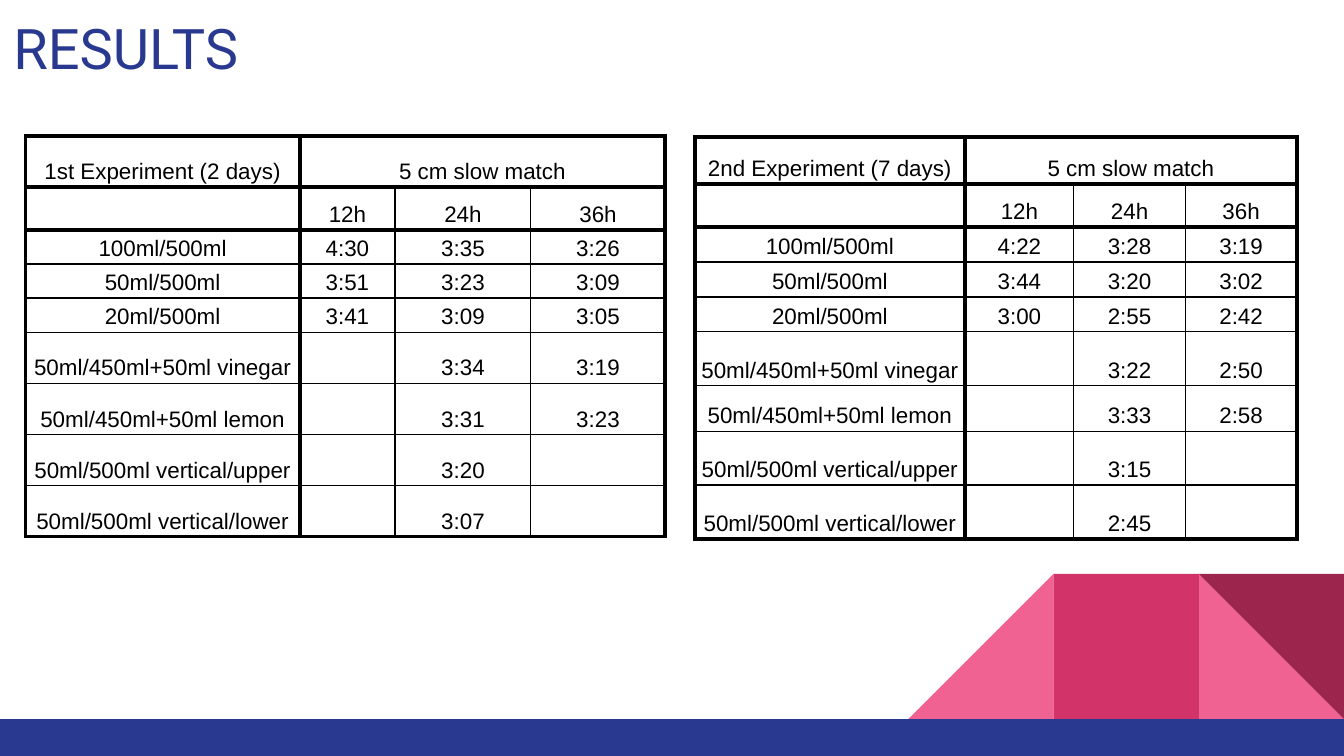
from dataclasses import dataclass

from lxml import etree
from pptx import Presentation
from pptx import util as u
from pptx.dml.color import RGBColor
from pptx.enum import shapes, text
from pptx.oxml import ns

NAVY = RGBColor(0x2A, 0x39, 0x90)
PINK = RGBColor(0xF0, 0x62, 0x92)
ROSE = RGBColor(0xD2, 0x33, 0x69)
WINE = RGBColor(0x9C, 0x25, 0x4D)
BLACK = RGBColor(0, 0, 0)

THICK, THIN = u.Pt(2.25), u.Pt(0.75)
TILE, TILE_TOP, TILE_LEFT = 1.08, 4.27, 6.76
HOURS = ["12h", "24h", "36h"]
MIXES = [
    "100ml/500ml",
    "50ml/500ml",
    "20ml/500ml",
    "50ml/450ml+50ml vinegar",
    "50ml/450ml+50ml lemon",
    "50ml/500ml vertical/upper",
    "50ml/500ml vertical/lower",
]


@dataclass
class Tile:
    column: int
    kind: shapes.MSO_SHAPE
    color: RGBColor
    rotation: int = 0
    mirrored: bool = False


@dataclass
class Experiment:
    title: str
    left: float
    top: float
    widths: list[float]
    heights: list[float]
    times: list[list[str]]


TILES = [
    Tile(2, shapes.MSO_SHAPE.RIGHT_TRIANGLE, PINK),
    Tile(0, shapes.MSO_SHAPE.RIGHT_TRIANGLE, PINK, mirrored=True),
    Tile(1, shapes.MSO_SHAPE.RECTANGLE, ROSE),
    Tile(2, shapes.MSO_SHAPE.RIGHT_TRIANGLE, WINE, rotation=180),
]

EXPERIMENTS = [
    Experiment(
        "1st Experiment (2 days)", 0.19, 1.01,
        [2.04, 0.71, 1.01, 1],
        [0.38, 0.27] + [0.2] * 3 + [0.38] * 4,
        [
            ["4:30", "3:35", "3:26"],
            ["3:51", "3:23", "3:09"],
            ["3:41", "3:09", "3:05"],
            ["", "3:34", "3:19"],
            ["", "3:31", "3:23"],
            ["", "3:20", ""],
            ["", "3:07", ""],
        ],
    ),
    Experiment(
        "2nd Experiment (7 days)", 5.17, 1.02,
        [2.01, 0.81, 0.83, 0.83],
        [0.35] + [0.26] * 4 + [0.4, 0.34, 0.4, 0.4],
        [
            ["4:22", "3:28", "3:19"],
            ["3:44", "3:20", "3:02"],
            ["3:00", "2:55", "2:42"],
            ["", "3:22", "2:50"],
            ["", "3:33", "2:58"],
            ["", "3:15", ""],
            ["", "2:45", ""],
        ],
    ),
]


def add_block(group, kind, left: float, top: float, width: float, height: float, color: RGBColor):
    block = group.shapes.add_shape(
        kind, u.Inches(left), u.Inches(top), u.Inches(width), u.Inches(height))
    block.shadow.inherit = False
    block.fill.solid()
    block.fill.fore_color.rgb = color
    block.line.fill.background()
    return block


def add_decoration(page) -> None:
    group = page.shapes.add_group_shape()
    for tile in TILES:
        block = add_block(group, tile.kind, TILE_LEFT + tile.column * TILE, TILE_TOP,
                          TILE, TILE, tile.color)
        block.rotation = tile.rotation
        if tile.mirrored:
            block._element.spPr.xfrm.set("flipH", "1")
    add_block(group, shapes.MSO_SHAPE.RECTANGLE, 0, 5.35, 10, 0.28, NAVY)


def add_title(page, words: str) -> None:
    title = page.shapes.title
    title.left, title.top = u.Inches(0), u.Inches(0)
    title.width, title.height = u.Inches(9.32), u.Inches(0.66)
    frame = title.text_frame
    frame.margin_left = frame.margin_right = u.Inches(0.1)
    frame.margin_top = frame.margin_bottom = u.Inches(0.1)
    frame.vertical_anchor = text.MSO_ANCHOR.TOP
    frame.auto_size = text.MSO_AUTO_SIZE.NONE
    frame.text = words
    para = frame.paragraphs[0]
    para.alignment = text.PP_ALIGN.LEFT
    para.font.name, para.font.size = "Roboto", u.Pt(30)
    para.font.color.rgb = NAVY


def set_borders(cell, widths: dict[str, int]) -> None:
    properties = cell._tc.get_or_add_tcPr()
    for side, width in widths.items():
        line = etree.SubElement(properties, ns.qn(f"a:ln{side}"), w=str(width))
        fill = etree.SubElement(line, ns.qn("a:solidFill"))
        etree.SubElement(fill, ns.qn("a:srgbClr"), val=str(BLACK))


def fill_cell(cell, words: str) -> None:
    cell.fill.background()
    cell.margin_left = cell.margin_right = u.Inches(0.03)
    cell.margin_top = cell.margin_bottom = u.Inches(0.02)
    cell.vertical_anchor = text.MSO_ANCHOR.BOTTOM
    cell.text = words
    para = cell.text_frame.paragraphs[0]
    para.font.name = "Arial"
    if words:
        para.alignment = text.PP_ALIGN.CENTER
        para.line_spacing = 1.15
        para.font.size = u.Pt(12)
        para.font.color.rgb = BLACK


def add_results(page, experiment: Experiment) -> None:
    rows = [[experiment.title, "5 cm slow match", "", ""], ["", *HOURS]]
    rows += [[mix, *times] for mix, times in zip(MIXES, experiment.times)]
    row_count, column_count = len(rows), len(experiment.widths)
    thick_rows, thick_columns = {0, 1, 2, row_count}, {0, 1, column_count}

    table = page.shapes.add_table(
        row_count, column_count, u.Inches(experiment.left), u.Inches(experiment.top),
        u.Inches(sum(experiment.widths)), u.Inches(sum(experiment.heights))).table
    table.first_row = table.horz_banding = False
    for column, width in zip(table.columns, experiment.widths):
        column.width = u.Inches(width)
    for row, height in zip(table.rows, experiment.heights):
        row.height = u.Inches(height)
    table.cell(0, 1).merge(table.cell(0, column_count - 1))

    for r, row in enumerate(rows):
        for c, words in enumerate(row):
            cell = table.cell(r, c)
            set_borders(cell, {
                "L": THICK if r == 0 or c in thick_columns else THIN,
                "R": THICK if r == 0 or c + 1 in thick_columns else THIN,
                "T": THICK if r in thick_rows else THIN,
                "B": THICK if r + 1 in thick_rows else THIN,
            })
            fill_cell(cell, words)


def main() -> None:
    deck = Presentation()
    deck.slide_width = u.Inches(10)
    deck.slide_height = deck.slide_width * 9 // 16
    page = deck.slides.add_slide(deck.slide_layouts[5])
    add_decoration(page)
    add_title(page, "RESULTS")
    for experiment in EXPERIMENTS:
        add_results(page, experiment)
    deck.save("out.pptx")


if __name__ == "__main__":
    main()
